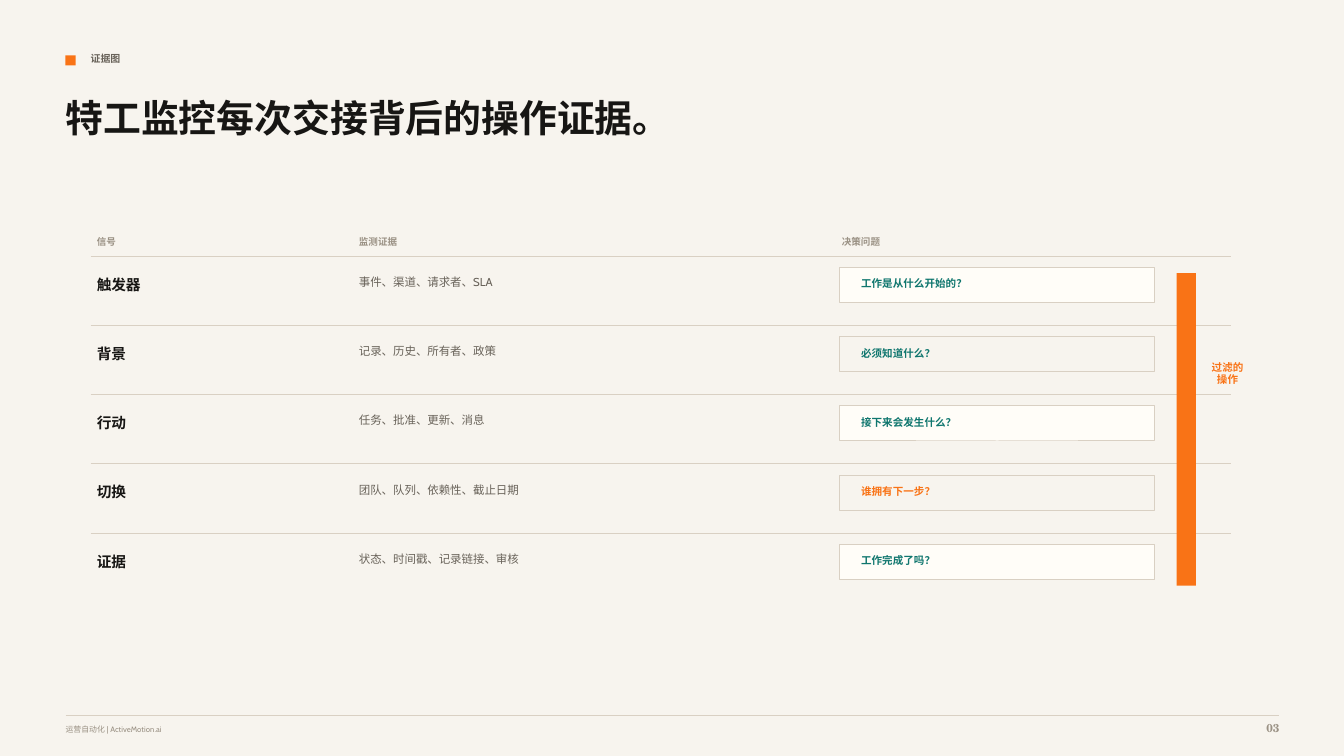
from dataclasses import dataclass

from lxml import etree
from pptx import Presentation
from pptx.dml.color import RGBColor
from pptx.enum.shapes import MSO_CONNECTOR, MSO_SHAPE
from pptx.enum.text import MSO_ANCHOR, MSO_AUTO_SIZE, PP_ALIGN
from pptx.oxml.ns import qn
from pptx.util import Inches, Pt

RECTANGLE = MSO_SHAPE.RECTANGLE
STRAIGHT = MSO_CONNECTOR.STRAIGHT
LEFT, CENTER, RIGHT = PP_ALIGN.LEFT, PP_ALIGN.CENTER, PP_ALIGN.RIGHT

# Content
SECTION = "证据图"
TITLE = "特工监控每次交接背后的操作证据。"
HEADERS = ("信号", "监测证据", "决策问题")
# signal, evidence, question, is the question highlighted
ROWS = [
    ("触发器", "事件、渠道、请求者、SLA", "工作是从什么开始的？", False),
    ("背景", "记录、历史、所有者、政策", "必须知道什么？", False),
    ("行动", "任务、批准、更新、消息", "接下来会发生什么？", False),
    ("切换", "团队、队列、依赖性、截止日期", "谁拥有下一步？", True),
    ("证据", "状态、时间戳、记录链接、审核", "工作完成了吗？", False),
]
BAND_LABEL = "过滤的操作"
FOOTER = "运营自动化 | ActiveMotion.ai"
PAGE_NUMBER = "03"


# Theme: a text style is (font, size, colour, bold)
@dataclass(frozen=True)
class Theme:
    paper: str = "F7F4EE"
    card: str = "FFFDF8"
    rule: str = "D9D0C3"
    accent: str = "F97316"
    rule_width: float = 0.75
    title: tuple = ("TeX Gyre Schola", 27, "171614", True)
    section: tuple = ("Cabin", 7.1, "69635A", True)
    header: tuple = ("Cabin", 6.8, "9A9184", True)
    signal: tuple = ("Cabin", 10.5, "171614", True)
    evidence: tuple = ("Cabin", 8.2, "69635A", False)
    question: tuple = ("Cabin", 7.5, "0F766E", True)
    highlight: tuple = ("Cabin", 7.5, "F97316", True)
    footer: tuple = ("Cabin", 5.6, "9A9184", False)
    page: tuple = ("TeX Gyre Schola", 8.2, "9A9184", True)


THEME = Theme()

# Layout, in inches
MARGIN, CONTENT_WIDTH = 0.65, 12.04
TABLE_LEFT, TABLE_TOP = 0.9, 2.23
COLUMN_WIDTHS = (2.6, 4.79, 3.92)
HEADER_HEIGHT, ROW_HEIGHT = 0.31, 0.6875
CARD_LEFT, CARD_OFFSET, CARD_WIDTH, CARD_HEIGHT = 8.33, 0.11, 3.12, 0.35


def color(value):
    return RGBColor.from_string(value)


def set_margins(target, left=0, top=0):
    target.margin_left, target.margin_top = Inches(left), Inches(top)
    target.margin_right = target.margin_bottom = 0


def write(frame, text, style, align=LEFT):
    frame.text = text
    paragraph = frame.paragraphs[0]
    paragraph.alignment = align
    font = paragraph.font
    font.name, font.bold = style[0], style[3]
    font.size = Pt(style[1])
    font.color.rgb = color(style[2])


def prepare_frame(frame, left=0, top=0):
    frame.word_wrap = True
    frame.auto_size = MSO_AUTO_SIZE.NONE
    frame.vertical_anchor = MSO_ANCHOR.TOP
    set_margins(frame, left, top)


def add_text(slide, box, text, style, align=LEFT):
    frame = slide.shapes.add_textbox(*map(Inches, box)).text_frame
    prepare_frame(frame)
    write(frame, text, style, align)


def add_block(slide, box, fill=None, line=None):
    shape = slide.shapes.add_shape(RECTANGLE, *map(Inches, box))
    shape.shadow.inherit = False
    if fill:
        shape.fill.solid()
        shape.fill.fore_color.rgb = color(fill)
    else:
        shape.fill.background()
    if line:
        shape.line.color.rgb = color(line)
        shape.line.width = Pt(THEME.rule_width)
    else:
        shape.line.fill.background()
    return shape


def add_rule(slide, left, top, width):
    rule = slide.shapes.add_connector(
        STRAIGHT, Inches(left), Inches(top), Inches(left + width), Inches(top))
    rule.line.color.rgb = color(THEME.rule)
    rule.line.width = Pt(THEME.rule_width)
    etree.SubElement(rule._element.spPr, qn("a:effectLst"))


def set_borders(cell, ruled_sides):
    properties = cell._tc.get_or_add_tcPr()
    for position, side in enumerate(("lnL", "lnR", "lnT", "lnB")):
        border = etree.Element(qn(f"a:{side}"), w=str(Pt(THEME.rule_width)))
        if side in ruled_sides:
            fill = etree.SubElement(border, qn("a:solidFill"))
            etree.SubElement(fill, qn("a:srgbClr"), val=THEME.rule)
        else:
            etree.SubElement(border, qn("a:noFill"))
        properties.insert(position, border)


def add_evidence_table(slide):
    count = len(ROWS) + 1
    table = slide.shapes.add_table(
        count, len(HEADERS), Inches(TABLE_LEFT), Inches(TABLE_TOP),
        Inches(sum(COLUMN_WIDTHS)),
        Inches(HEADER_HEIGHT + ROW_HEIGHT * len(ROWS))).table
    table.first_row = table.horz_banding = False
    for column, width in zip(table.columns, COLUMN_WIDTHS):
        column.width = Inches(width)
    for index, row in enumerate(table.rows):
        row.height = Inches(ROW_HEIGHT if index else HEADER_HEIGHT)
        sides = {"lnT"} if index else set()
        if index < count - 1:
            sides.add("lnB")
        # The questions sit in cards over the third column
        texts = ROWS[index - 1][:2] if index else HEADERS
        styles = (THEME.signal, THEME.evidence) if index else (THEME.header,) * 3
        for cell in row.cells:
            cell.fill.background()
            set_borders(cell, sides)
            set_margins(cell, 0.06, 0.17 if index else 0.1)
        for cell, text, style in zip(row.cells, texts, styles):
            write(cell.text_frame, text, style)


def add_question_cards(slide):
    for index, (_, _, question, highlighted) in enumerate(ROWS):
        top = TABLE_TOP + HEADER_HEIGHT + index * ROW_HEIGHT + CARD_OFFSET
        fill = None if index % 2 else THEME.card
        card = add_block(slide, (CARD_LEFT, top, CARD_WIDTH, CARD_HEIGHT),
                         fill, THEME.rule)
        prepare_frame(card.text_frame, 0.21, 0.1)
        write(card.text_frame, question,
              THEME.highlight if highlighted else THEME.question)


def main():
    presentation = Presentation()
    presentation.slide_width = Inches(13.33)
    presentation.slide_height = Inches(7.5)
    slide = presentation.slides.add_slide(presentation.slide_layouts[5])
    slide.background.fill.solid()
    slide.background.fill.fore_color.rgb = color(THEME.paper)

    # Heading
    add_block(slide, (MARGIN, 0.55, 0.1, 0.1), THEME.accent)
    add_text(slide, (0.9, 0.52, 6.46, 0.19), SECTION, THEME.section)
    title = slide.shapes.title
    title.left, title.top = Inches(MARGIN), Inches(0.94)
    title.width, title.height = Inches(8.85), Inches(1.04)
    prepare_frame(title.text_frame)
    write(title.text_frame, TITLE, THEME.title)

    # Evidence table and decision questions
    add_evidence_table(slide)
    add_question_cards(slide)

    # Filter band
    add_block(slide, (11.67, 2.71, 0.19, 3.1), THEME.accent)
    add_text(slide, (12, 3.58, 0.35, 1.23), BAND_LABEL, THEME.highlight, CENTER)

    # Footer
    add_rule(slide, MARGIN, 7.1, CONTENT_WIDTH)
    add_text(slide, (MARGIN, 7.19, 7.92, 0.15), FOOTER, THEME.footer)
    add_text(slide, (12.19, 7.15, 0.5, 0.19), PAGE_NUMBER, THEME.page, RIGHT)

    presentation.save("out.pptx")


if __name__ == "__main__":
    main()
